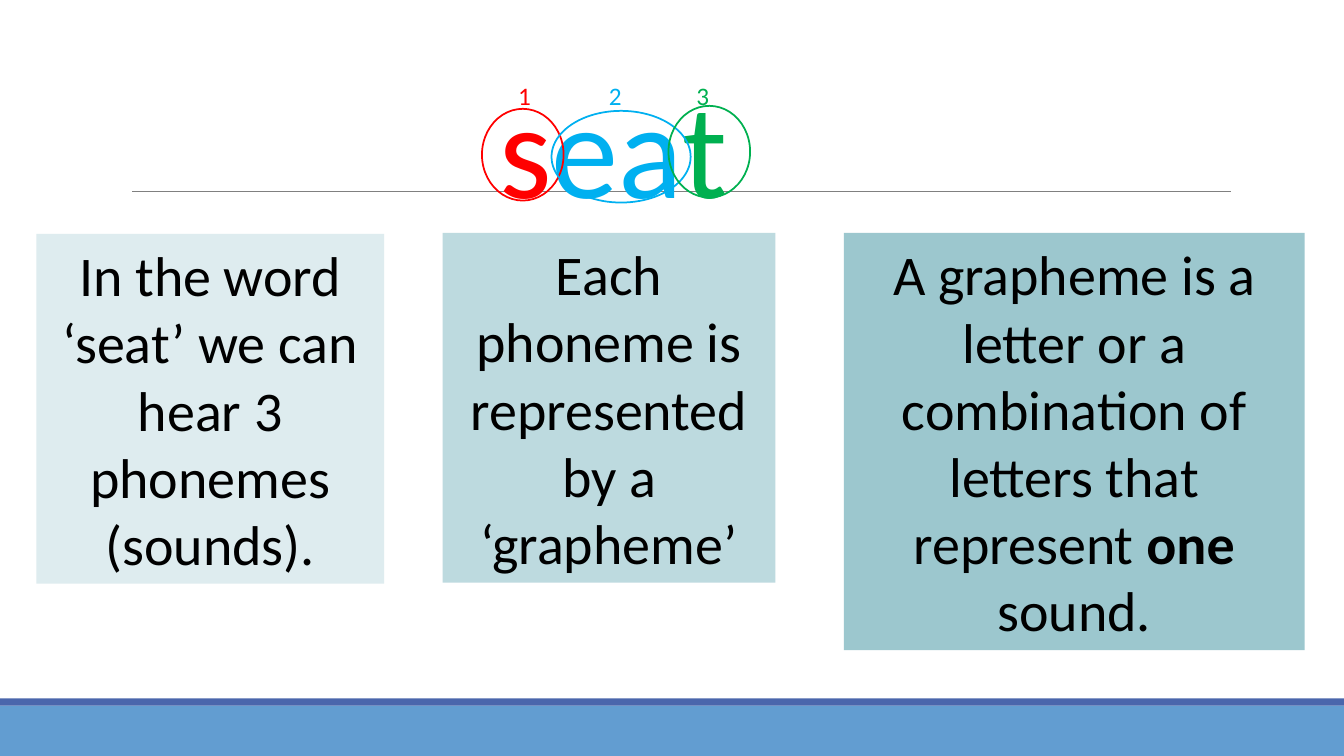
"""Build a slide that splits the word seat into its phonemes and graphemes."""
import pptx
import pptx.dml.color
import pptx.enum.shapes
import pptx.enum.text
import pptx.util
from lxml import etree

Inches = pptx.util.Inches
Pt = pptx.util.Pt
RGBColor = pptx.dml.color.RGBColor
Shape = pptx.enum.shapes.MSO_SHAPE
Align = pptx.enum.text.PP_ALIGN

RED = RGBColor(0xFF, 0x00, 0x00)
BLUE = RGBColor(0x00, 0xB0, 0xF0)
GREEN = RGBColor(0x00, 0xB0, 0x50)
BLACK = RGBColor(0x00, 0x00, 0x00)
GREY = RGBColor(0x80, 0x80, 0x80)
FOOTER_BLUE = RGBColor(0x62, 0x9D, 0xD1)
FOOTER_EDGE = RGBColor(0x4A, 0x66, 0xAC)
PALE_TEAL = RGBColor(0xDE, 0xEC, 0xEF)
LIGHT_TEAL = RGBColor(0xBD, 0xDA, 0xDF)
MID_TEAL = RGBColor(0x9C, 0xC7, 0xCE)

FONT = "Calibri"
WIDTH, HEIGHT = 13.33, 7.5

FOOTER_BANDS = [
    ((0, 7, WIDTH, 0.5), FOOTER_BLUE),
    ((0, 6.93, WIDTH, 0.07), FOOTER_EDGE),
]
RULE = (1.31, 1.9, 12.21, 1.9)
WORD_AREA = (4.49, 0.59, 3.19, 1.72)
GRAPHEMES = [
    ("s", RED, 5.04, (4.78, 1.08, 0.81, 0.91)),
    ("ea", BLUE, 5.94, (5.47, 1.1, 1.38, 0.91)),
    ("t", GREEN, 6.81, (6.63, 1.05, 0.81, 0.91)),
]
PANELS = [
    ((0.36, 2.32, 3.45, 3.47), PALE_TEAL,
     [("In the word ‘seat’ we can hear 3 phonemes\n(sounds).", False)]),
    ((4.39, 2.31, 3.3, 3.47), LIGHT_TEAL,
     [("Each phoneme is represented by a ‘grapheme’", False)]),
    ((8.37, 2.31, 4.57, 4.14), MID_TEAL,
     [("A grapheme is a letter or a combination of letters that represent ", False),
      ("one ", True), ("sound.", False)]),
]


def add_figure(page, kind, area, fill=None, outline=None):
    """Add a preset shape with a plain fill or a thin outline."""
    figure = page.shapes.add_shape(kind, *map(Inches, area))
    figure.shadow.inherit = False
    if fill is None:
        figure.fill.background()
    else:
        figure.fill.solid()
        figure.fill.fore_color.rgb = fill
    if outline is None:
        figure.line.fill.background()
    else:
        figure.line.color.rgb = outline
        figure.line.width = Pt(1.25)
    return figure


def write(box, spans, size, align, wrap=True):
    """Fill a box with one paragraph of (text, colour, bold) spans."""
    frame = box.text_frame
    frame.word_wrap = wrap
    frame.auto_size = pptx.enum.text.MSO_AUTO_SIZE.SHAPE_TO_FIT_TEXT
    para = frame.paragraphs[0]
    para.alignment = align
    para.font.name = FONT
    para.font.size = Pt(size)
    for text, color, bold in spans:
        for number, line in enumerate(text.split("\n")):
            if number:
                para.add_line_break()
            span = para.add_run()
            span.text = line
            span.font.color.rgb = color
            span.font.bold = bold


def add_rule(page):
    """Draw the thin line behind the word."""
    rule = page.shapes.add_connector(
        pptx.enum.shapes.MSO_CONNECTOR.STRAIGHT, *map(Inches, RULE))
    rule.line.color.rgb = GREY
    rule.line.width = Pt(0.5)
    etree.SubElement(rule._element.spPr, pptx.oxml.ns.qn("a:effectLst"))


def main():
    """Assemble and save the slide."""
    deck = pptx.Presentation()
    deck.slide_width, deck.slide_height = Inches(WIDTH), Inches(HEIGHT)
    page = deck.slides.add_slide(deck.slide_layouts[6])

    for area, color in FOOTER_BANDS:
        add_figure(page, Shape.RECTANGLE, area, fill=color)
    add_rule(page)

    word = page.shapes.add_textbox(*map(Inches, WORD_AREA))
    write(word, [(letters, color, False) for letters, color, _, _ in GRAPHEMES],
          96, Align.CENTER)

    for area, color, spans in PANELS:
        panel = add_figure(page, Shape.RECTANGLE, area, fill=color)
        write(panel, [(text, BLACK, bold) for text, bold in spans], 40, Align.CENTER)

    for number, (_, color, left, _) in enumerate(GRAPHEMES, 1):
        label = page.shapes.add_textbox(*map(Inches, (left, 0.75, 0.3, 0.4)))
        write(label, [(str(number), color, False)], 18, Align.LEFT, wrap=False)
    for _, color, _, ring in GRAPHEMES:
        add_figure(page, Shape.OVAL, ring, outline=color)

    deck.save("out.pptx")


if __name__ == "__main__":
    main()
